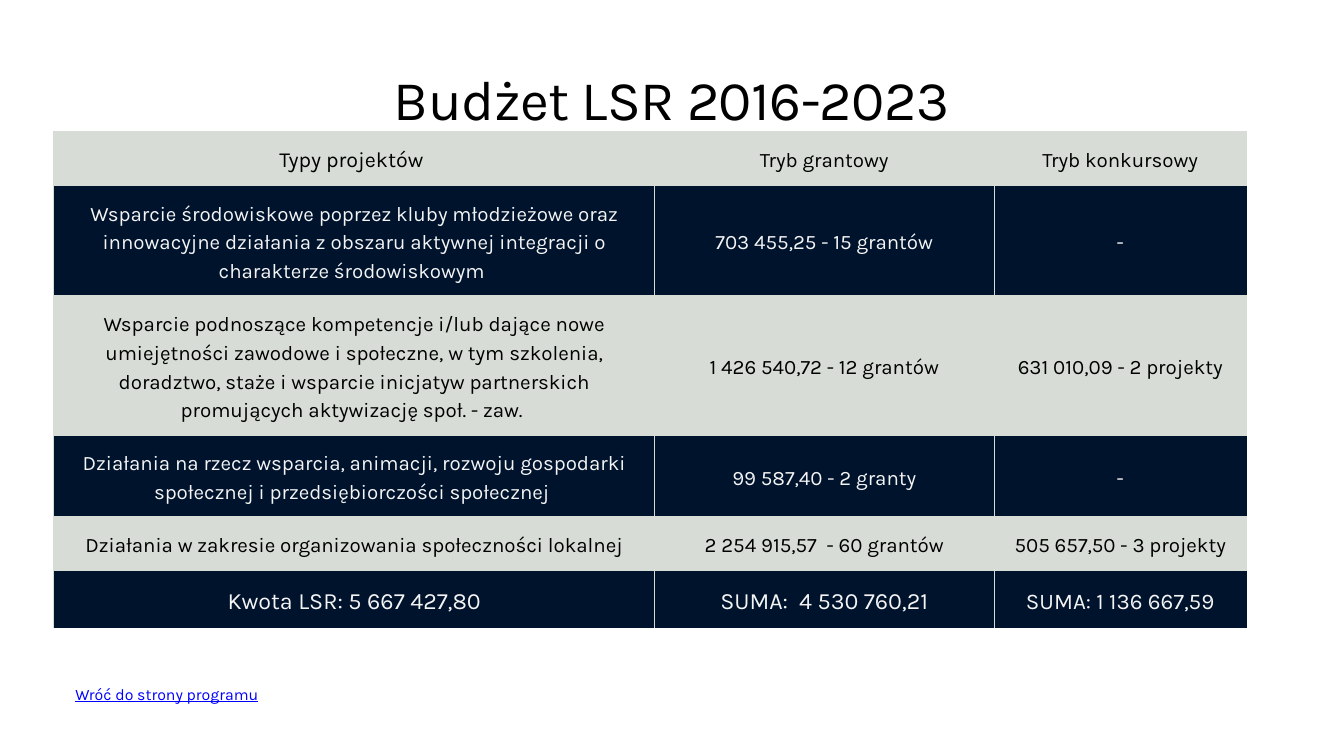
from pptx import Presentation
from pptx.dml.color import RGBColor
from pptx.enum import text
from pptx.oxml.ns import qn
from pptx.util import Inches, Pt
from lxml import etree

FONT = "Karla"
NAVY, SAGE, BLACK, PALE, LINK_BLUE = "00132D", "D7DDD6", "000000", "F4F4F4", "0000FF"

COLUMN_WIDTHS = [8.94, 5.05, 3.76]
ROW_HEIGHTS = [0.81, 1.64, 2.08, 1.21, 0.8, 0.86]
BODY_SIZE = 22
SPECIAL_SIZES = {(0, 0): 23, (5, 0): 25, (5, 1): 25, (5, 2): 24}
BUDGET = [
    ["Typy projektów ", "Tryb grantowy", "Tryb konkursowy"],
    ["Wsparcie środowiskowe poprzez kluby młodzieżowe oraz innowacyjne działania "
     "z obszaru aktywnej integracji o charakterze środowiskowym ",
     "703 455,25 - 15 grantów", "-"],
    ["Wsparcie podnoszące kompetencje i/lub dające nowe umiejętności zawodowe "
     "i społeczne, w tym szkolenia, doradztwo, staże i wsparcie inicjatyw "
     "partnerskich promujących aktywizację społ. - zaw. ",
     "1 426 540,72 - 12 grantów", "631 010,09 - 2 projekty"],
    ["Działania na rzecz wsparcia, animacji, rozwoju gospodarki społecznej "
     "i przedsiębiorczości społecznej ",
     "99 587,40 - 2 granty", "-"],
    ["Działania w zakresie organizowania społeczności lokalnej",
     "2 254 915,57  - 60 grantów", "505 657,50 - 3 projekty"],
    ["Kwota LSR: 5 667 427,80", "SUMA:  4 530 760,21", "SUMA: 1 136 667,59"],
]


def rgb(color):
    return RGBColor.from_string(color)


def write(text_frame, content, size, color, align, spacing=1.4):
    """Fill a frame with one paragraph; spacing is a multiple of the font size."""
    text_frame.text = content
    paragraph = text_frame.paragraphs[0]
    paragraph.alignment = align
    paragraph.line_spacing = Pt(round(size * spacing, 1))
    run = paragraph.runs[0]
    run.font.name = FONT
    run.font.size = Pt(size)
    run.font.color.rgb = rgb(color)
    return run


def add_text(slide, box, content, size, color, align, spacing=1.4):
    shape = slide.shapes.add_textbox(*map(Inches, box))
    text_frame = shape.text_frame
    text_frame.word_wrap = True
    text_frame.margin_left = text_frame.margin_right = 0
    text_frame.margin_top = text_frame.margin_bottom = 0
    text_frame.auto_size = text.MSO_AUTO_SIZE.SHAPE_TO_FIT_TEXT
    return write(text_frame, content, size, color, align, spacing)


def set_borders(cell, hidden):
    """Draw thin borders on all sides but the hidden ones (letters of L, R, T, B)."""
    properties = cell._tc.get_or_add_tcPr()
    for side in "LRTB":
        width = 0 if side in hidden else Pt(0.75)
        line = etree.SubElement(properties, qn(f"a:ln{side}"), w=str(width))
        if side in hidden:
            etree.SubElement(line, qn("a:noFill"))
        else:
            fill = etree.SubElement(line, qn("a:solidFill"))
            etree.SubElement(fill, qn("a:srgbClr"), val=SAGE)


def format_cell(cell, content, size, background, color, hidden):
    set_borders(cell, hidden)
    cell.fill.solid()
    cell.fill.fore_color.rgb = rgb(background)
    cell.vertical_anchor = text.MSO_ANCHOR.MIDDLE
    cell.margin_left = cell.margin_right = Inches(0.13)
    cell.margin_top = cell.margin_bottom = Inches(0.13)
    write(cell.text_frame, content, size, color, text.PP_ALIGN.CENTER)


def add_budget_table(slide, left, top):
    last_row, last_column = len(ROW_HEIGHTS) - 1, len(COLUMN_WIDTHS) - 1
    table = slide.shapes.add_table(
        len(ROW_HEIGHTS), len(COLUMN_WIDTHS), Inches(left), Inches(top),
        Inches(sum(COLUMN_WIDTHS)), Inches(sum(ROW_HEIGHTS))).table
    table.first_row = table.horz_banding = False
    for column, width in zip(table.columns, COLUMN_WIDTHS):
        column.width = Inches(width)
    for row, height in zip(table.rows, ROW_HEIGHTS):
        row.height = Inches(height)
    for r, contents in enumerate(BUDGET):
        background, color = (NAVY, PALE) if r % 2 else (SAGE, BLACK)
        for c, content in enumerate(contents):
            hidden = ("T" * (r == 0) + "B" * (r == last_row)
                      + "R" * (c == last_column))
            size = SPECIAL_SIZES.get((r, c), BODY_SIZE)
            format_cell(table.cell(r, c), content, size, background, color, hidden)


def main():
    presentation = Presentation()
    presentation.slide_width = Inches(20)
    presentation.slide_height = Inches(11.25)
    slide = presentation.slides.add_slide(presentation.slide_layouts[6])

    title = add_text(slide, (1.12, 0.88, 17.75, 1.07), "Budżet LSR 2016-2023",
                     60, BLACK, text.PP_ALIGN.CENTER, spacing=1.3)
    title._r.get_or_add_rPr().set("spc", "-60")
    add_budget_table(slide, 0.8, 1.95)
    back = add_text(slide, (1.12, 10.14, 5.72, 0.32), "Wróć do strony programu",
                    17, LINK_BLUE, text.PP_ALIGN.LEFT)
    back.font.underline = True

    presentation.save("out.pptx")


if __name__ == "__main__":
    main()
